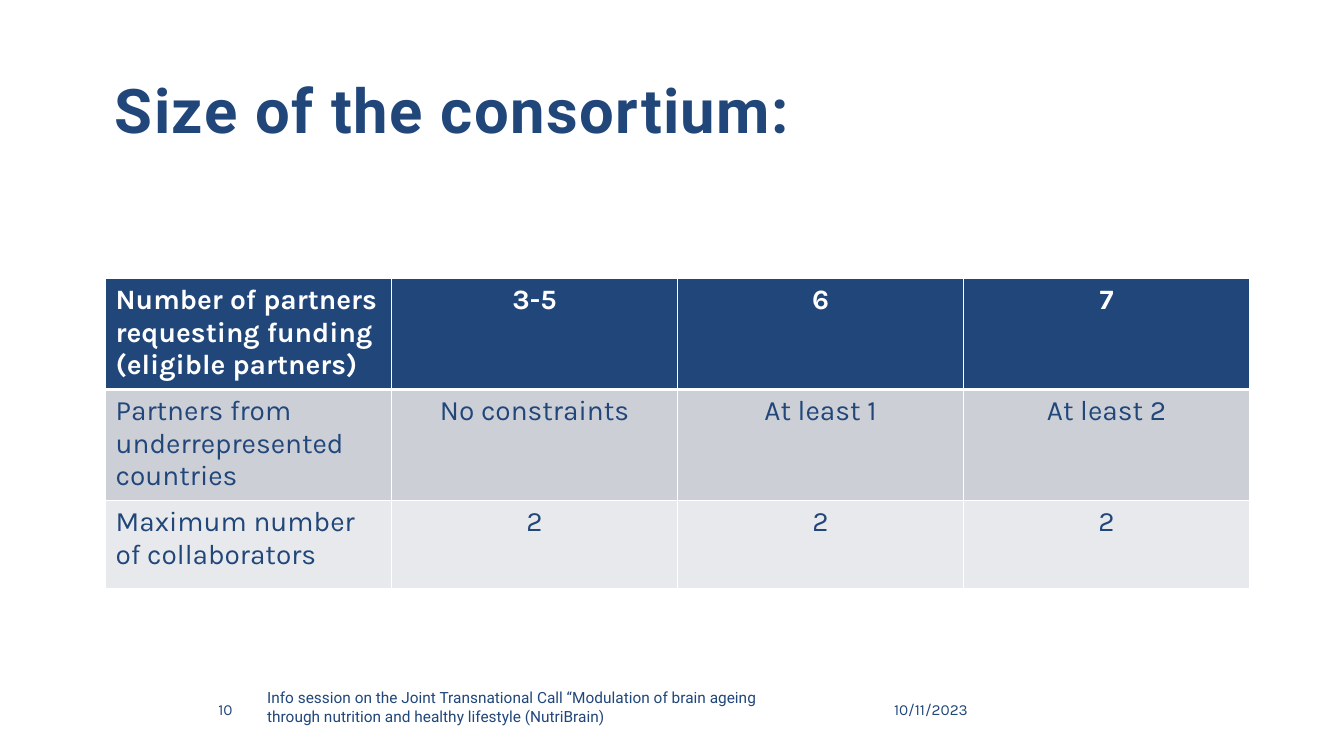
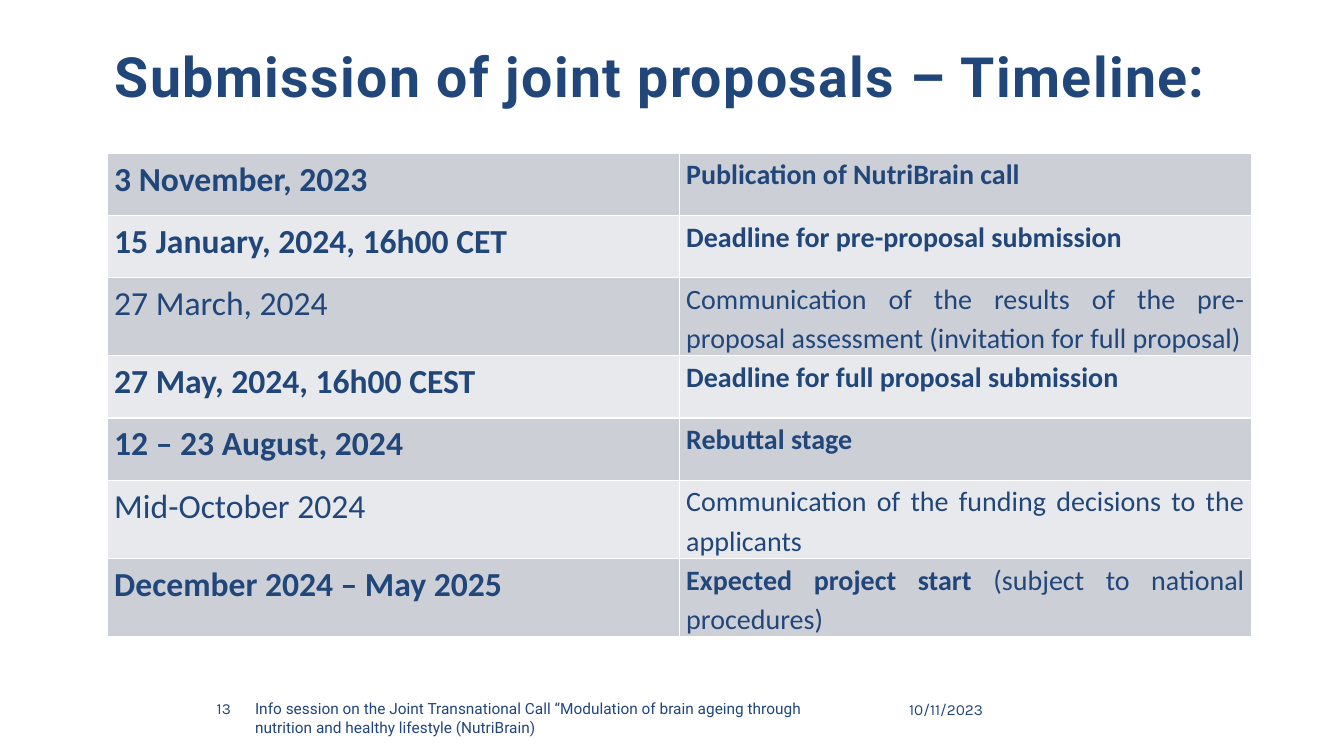
from pptx import Presentation
from pptx.dml.color import RGBColor
from pptx.enum.text import MSO_ANCHOR, PP_ALIGN
from pptx.oxml import parse_xml
from pptx.oxml.ns import nsdecls
from pptx.util import Pt

LEFT, CENTER, JUST = PP_ALIGN.LEFT, PP_ALIGN.CENTER, PP_ALIGN.JUSTIFY
TOP, MIDDLE = MSO_ANCHOR.TOP, MSO_ANCHOR.MIDDLE

NAVY, WHITE = "20467A", "FFFFFF"
BANDS = ["CDCFD7", "E8E9EC"]
TITLE = dict(font="Roboto", bold=True, gap=1, line=0.9)
NOTE = "Info session on the Joint Transnational Call “Modulation of brain ageing through nutrition and healthy lifestyle (NutriBrain)"
DATE = "10/11/2023"


def write(frame, text, size=20, font="Karla", color=NAVY, bold=False,
          align=LEFT, line=None, gap=0, pad=None, anchor=TOP):
    """Add one run to the first paragraph of a text frame."""
    frame.word_wrap = True
    frame.vertical_anchor = anchor
    if pad is not None:
        frame.margin_left = frame.margin_right = Pt(pad)
        frame.margin_top = frame.margin_bottom = 0
    para = frame.paragraphs[0]
    para.alignment = align
    if line:
        para.line_spacing = line
    run = para.add_run()
    run.text = text
    run.font.size, run.font.name, run.font.bold = Pt(size), font, bold
    run.font.color.rgb = RGBColor.from_string(color)
    if gap:
        run._r.get_or_add_rPr().set("spc", str(gap * 100))


def paint(cell, color, top=1, base=1):
    """Fill a cell and give it white borders."""
    cell.fill.solid()
    cell.fill.fore_color.rgb = RGBColor.from_string(color)
    props = cell._tc.get_or_add_tcPr()
    for i, (side, width) in enumerate(zip("LRTB", (1, 1, top, base))):
        props.insert(i, parse_xml(
            f'<a:ln{side} {nsdecls("a")} w="{Pt(width)}"><a:solidFill>'
            f'<a:srgbClr val="{WHITE}"/></a:solidFill></a:ln{side}>'))


deck = Presentation()
deck.slide_width, deck.slide_height = Pt(960), Pt(540)

# Titles and footers: text, size, top, then the places of the footer parts
pages = [
    ("Size of the consortium:", 44, 29,
     [("10", 156, 500.4, 32, "Karla"), (NOTE, 190.8, 491.8, 389.5, "Roboto"),
      (DATE, 638.6, 500.4, 104, "Karla")]),
    ("Submission of joint proposals – Timeline:", 39.6, 4.5,
     [("13", 154.8, 499.7, 20, "Karla"), (NOTE, 182.2, 499.7, 415.5, "Roboto"),
      (DATE, 649.4, 500.4, 104, "Karla")]),
]
slides = []
for title, size, top, foot in pages:
    slide = deck.slides.add_slide(deck.slide_layouts[6])
    slides.append(slide)
    box = slide.shapes.add_textbox(Pt(75), Pt(top), Pt(820), Pt(104))
    write(box.text_frame, title, size=size, anchor=MIDDLE, **TITLE)
    for text, x, y, width, font in foot:
        box = slide.shapes.add_textbox(Pt(x), Pt(y), Pt(width), Pt(27))
        write(box.text_frame, text, size=11, font=font, pad=0)

# Consortium table
rows = [
    ["Number of partners requesting funding (eligible partners)", "3-5", "6", "7"],
    ["Partners from underrepresented countries", "No constraints", "At least 1", "At least 2"],
    ["Maximum number of collaborators", "2", "2", "2"],
]
table = slides[0].shapes.add_table(3, 4, Pt(75.4), Pt(199), Pt(817.2), Pt(217)).table
for r, row in enumerate(rows):
    head = r == 0
    table.rows[r].height = Pt(63 if r == 2 else 77)
    for c, text in enumerate(row):
        cell = table.cell(r, c)
        paint(cell, NAVY if head else BANDS[(r - 1) % 2],
              top=3 if r == 1 else 1, base=3 if head else 1)
        write(cell.text_frame, text, bold=head, color=WHITE if head else NAVY,
              align=CENTER if c else LEFT)

# Timeline table: date, bold event, plain event
steps = [
    ("3 November, 2023", "Publication of NutriBrain call", ""),
    ("15 January, 2024, 16h00 CET", "Deadline for pre-proposal submission", ""),
    ("27 March, 2024", "",
     "Communication of the results of the pre-proposal assessment (invitation for full proposal)"),
    ("27 May, 2024, 16h00 CEST", "Deadline for full proposal submission", ""),
    ("12 – 23 August, 2024", "Rebuttal stage", ""),
    ("Mid-October 2024", "", "Communication of the funding decisions to the applicants"),
    ("December 2024 – May 2025", "Expected project start ", "(subject to national procedures)"),
]
body = dict(font="Calibri", align=JUST, line=1.15, pad=5)
table = slides[1].shapes.add_table(7, 2, Pt(76.6), Pt(109.4), Pt(817.2), Pt(346)).table
table.first_row = False
for r, (date, strong, plain) in enumerate(steps):
    table.rows[r].height = Pt(56 if plain else 44.4)
    for cell in table.rows[r].cells:
        paint(cell, BANDS[r % 2])
        cell.margin_left = cell.margin_right = Pt(5)
        cell.margin_top = cell.margin_bottom = 0
    write(table.cell(r, 0).text_frame, date, size=24, bold=bool(strong), **body)
    for text, bold in ((strong, True), (plain, False)):
        if text:
            write(table.cell(r, 1).text_frame, text, bold=bold, **body)

deck.save("out.pptx")
